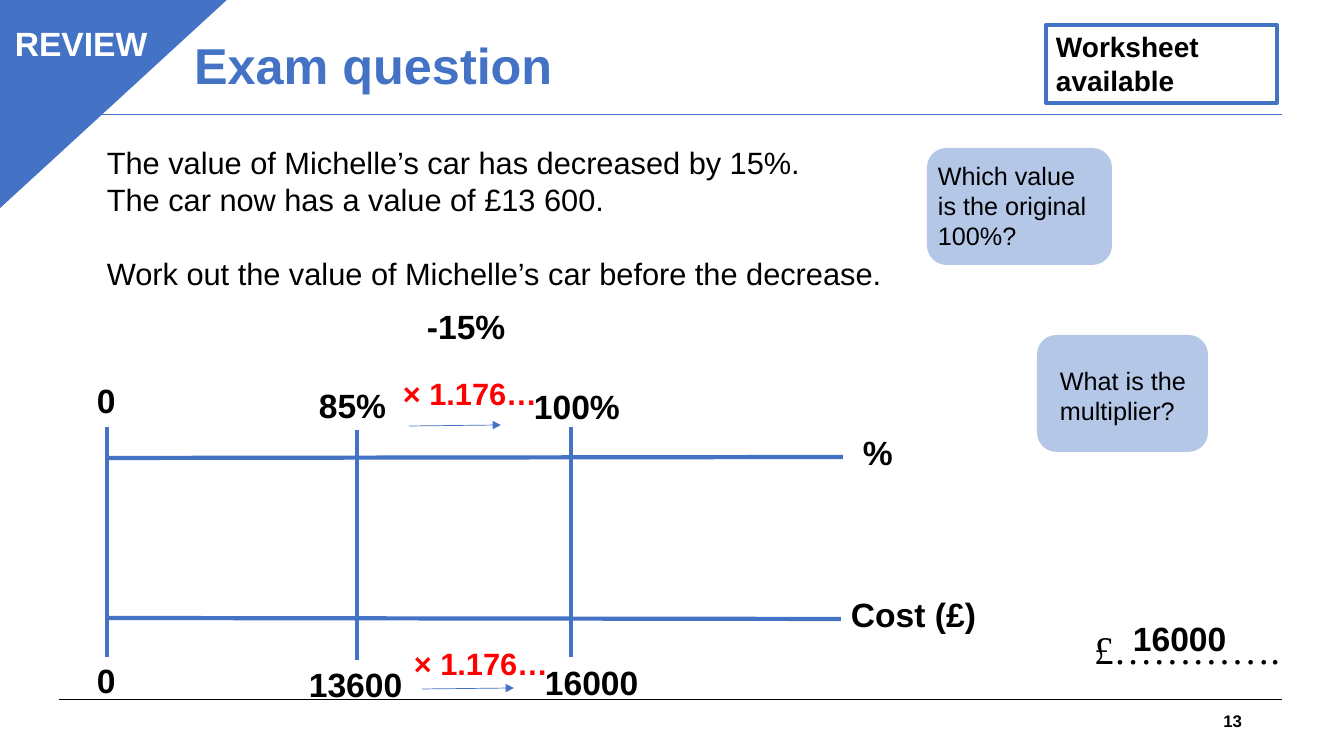
from lxml import etree
from pptx import Presentation
from pptx import util as u
from pptx.dml.color import RGBColor
from pptx.enum import shapes, text
from pptx.oxml.ns import qn

EMU_PER_PX = 914400 / 100.8
BLUE, PALE, BLACK, RED, WHITE = "4472C4", "B4C7E7", "000000", "FF0000", "FFFFFF"
LEFT, CENTER, RIGHT = text.PP_ALIGN.LEFT, text.PP_ALIGN.CENTER, text.PP_ALIGN.RIGHT
TOP, MIDDLE = text.MSO_ANCHOR.TOP, text.MSO_ANCHOR.MIDDLE
SHAPE = shapes.MSO_SHAPE


def px(*lengths):
    return [u.Emu(round(n * EMU_PER_PX)) for n in lengths]


def rgb(hex_color):
    return RGBColor.from_string(hex_color)


def write(sp, words, size=24, color=BLACK, bold=True, font="Arial",
          align=LEFT, anchor=TOP, wrap=True):
    """Fill a shape with text; \\n parts paragraphs and \\v breaks a line."""
    tf = sp.text_frame
    tf.word_wrap = wrap
    tf.vertical_anchor = anchor
    tf.text = words
    for p in tf.paragraphs:
        p.alignment = align
        for r in p.runs:
            r.font.size = u.Pt(size)
            r.font.name = font
            r.font.bold = bold
            r.font.color.rgb = rgb(color)
    return tf


def label(s, words, x, y, w, h=50, **fmt):
    return write(s.shapes.add_textbox(*px(x, y, w, h)), words, **fmt)


def block(s, kind, x, y, w, h, fill=None, line=None, width=1):
    sp = s.shapes.add_shape(kind, *px(x, y, w, h))
    sp.shadow.inherit = False
    if fill:
        sp.fill.solid()
        sp.fill.fore_color.rgb = rgb(fill)
    else:
        sp.fill.background()
    if line:
        sp.line.color.rgb = rgb(line)
        sp.line.width = u.Pt(width)
    else:
        sp.line.fill.background()
    return sp


def rule(s, x1, y1, x2, y2, color=BLUE, width=3.0, arrow=False):
    c = s.shapes.add_connector(shapes.MSO_CONNECTOR.STRAIGHT, *px(x1, y1, x2, y2))
    c.line.color.rgb = rgb(color)
    c.line.width = u.Pt(width)
    if arrow:
        etree.SubElement(c.line._get_or_add_ln(), qn("a:tailEnd"), type="triangle")
    etree.SubElement(c.element.spPr, qn("a:effectLst"))


def add_frame(s):
    """Title, corner flag, worksheet note, rules and page number."""
    rule(s, 59, 700, 1282, 700, BLACK, 0.75)
    rule(s, 59, 115, 1282, 115, BLUE, 0.75)

    title = s.shapes.title
    title.left, title.top, title.width, title.height = px(184, 12, 1008, 112)
    tf = write(title, "Exam question", size=36, color=BLUE, anchor=MIDDLE)
    tf.paragraphs[0].line_spacing = 0.9

    label(s, "13", 950, 701, 302, 40, size=12, align=RIGHT, anchor=MIDDLE)

    corner = block(s, SHAPE.ISOSCELES_TRIANGLE, -3, -2, 231, 212, BLUE, BLUE)
    corner.adjustments[0] = 0
    corner.element.spPr.get_or_add_xfrm().set("flipV", "1")
    label(s, "REVIEW", -2, 18, 166, color=WHITE, align=CENTER)

    note = block(s, SHAPE.RECTANGLE, 1046, 25, 231, 78, line=BLUE, width=3)
    write(note, "Worksheet\vavailable", size=20)


def add_question(s):
    tf = label(s, "The value of Michelle’s car has decreased by 15%.\n"
                  "The car now has a value of £13 600.\n"
                  "Work out the value of Michelle’s car before the decrease.",
               97, 139, 1193, 165, size=22, bold=False)
    tf.paragraphs[2].space_before = u.Pt(26)
    label(s, "£………….", 1060, 620, 230, 55, size=28, bold=False,
          font="Times New Roman", align=RIGHT)
    label(s, "16000", 1123, 613, 114)


def add_number_lines(s):
    rule(s, 109, 458, 843, 457)
    rule(s, 107, 618, 841, 619)
    for x, top in ((107, 427), (357, 430), (571, 427)):
        rule(s, x, top, x, top + 230)

    for words, x, y, w in (
        ("%", 853, 427, 50), ("Cost (£)", 841, 589, 181),
        ("0", 87, 375, 42), ("0", 87, 655, 42),
        ("85%", 309, 380, 114), ("13600", 299, 659, 135),
        ("100%", 524, 381, 114), ("16000", 535, 657, 114),
        ("-15%", 417, 301, 114),
    ):
        label(s, words, x, y, w)

    for x, y, arrow_x, arrow_y in ((393, 370, 409, 426), (404, 640, 422, 689)):
        rule(s, arrow_x, arrow_y, arrow_x + 92, arrow_y - 1, width=0.5, arrow=True)
        label(s, "× 1.176…", x, y, 200, 47, size=22, color=RED)


def add_hints(s):
    for words, x, y, w, text_x, text_y in (
        ("Which value is the original 100%?", 927, 148, 185, 928, 155),
        ("What is the multiplier?", 1037, 335, 171, 1050, 360),
    ):
        block(s, SHAPE.ROUNDED_RECTANGLE, x, y, w, 117, PALE)
        label(s, words, text_x, text_y, 179, 72, size=18, bold=False)


def main():
    prs = Presentation()
    prs.slide_width, prs.slide_height = px(1344, 756)
    s = prs.slides.add_slide(prs.slide_layouts[5])
    add_frame(s)
    add_question(s)
    add_number_lines(s)
    add_hints(s)
    prs.save("out.pptx")


if __name__ == "__main__":
    main()
